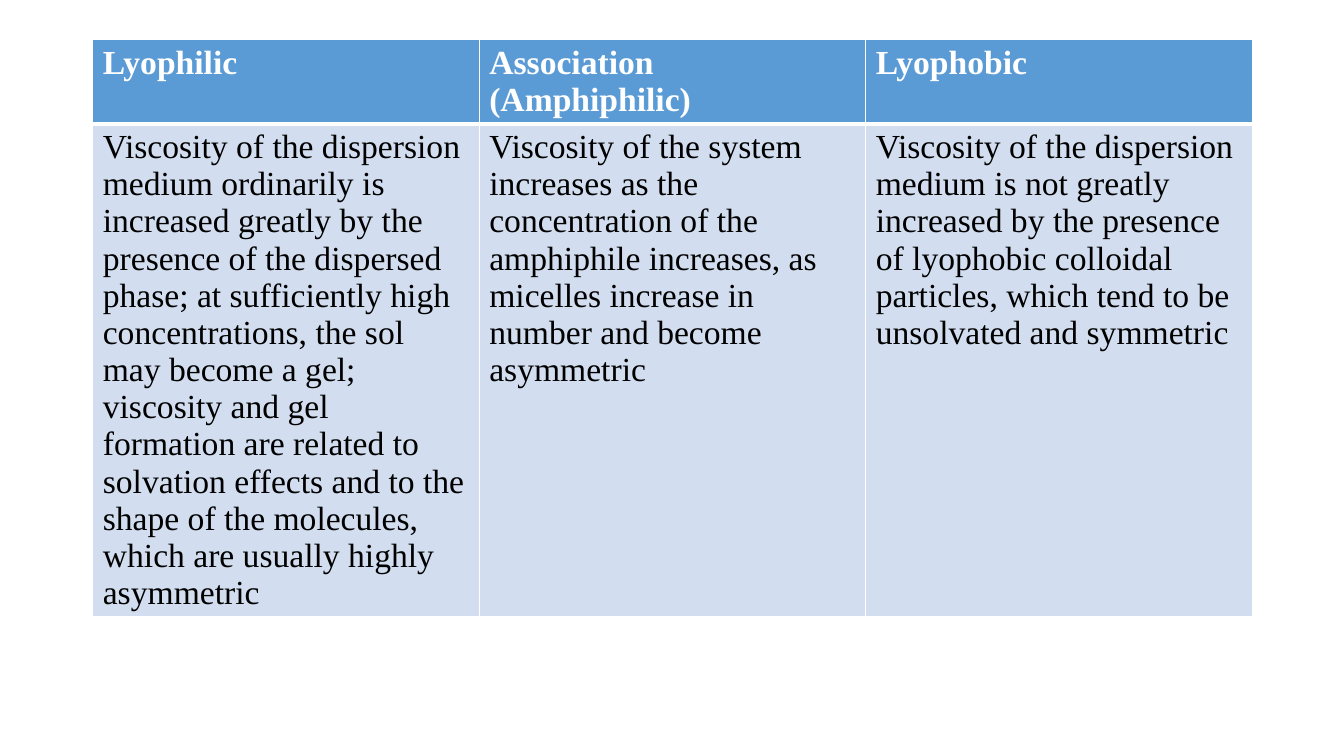
"""Build a slide with a table comparing the viscosity of three colloid types."""
from lxml import etree
from pptx import Presentation
from pptx.dml.color import RGBColor
from pptx.oxml.ns import qn
from pptx.util import Inches, Pt

COLUMNS = [
    ("Lyophilic",
     "Viscosity of the dispersion medium ordinarily is increased greatly by the "
     "presence of the dispersed phase; at sufficiently high concentrations, the sol "
     "may become a gel; viscosity and gel formation are related to solvation effects "
     "and to the shape of the molecules, which are usually highly asymmetric"),
    ("Association (Amphiphilic)",
     "Viscosity of the system increases as the concentration of the amphiphile "
     "increases, as micelles increase in number and become asymmetric"),
    ("Lyophobic",
     "Viscosity of the dispersion medium is not greatly increased by the presence of "
     "lyophobic colloidal particles, which tend to be unsolvated and symmetric"),
]
ROW_STYLES = [
    {"height": 0.83, "fill": "5B9BD5", "text": "FFFFFF", "bold": True,
     "borders": {"lnL": 1, "lnR": 1, "lnT": 1, "lnB": 3}},
    {"height": 4.89, "fill": "D2DEEF", "text": "000000", "bold": False,
     "borders": {"lnL": 1, "lnR": 1, "lnT": 3, "lnB": 1}},
]
BORDER_COLOR = "FFFFFF"
FONT = "Times New Roman"
LEFT, TOP, WIDTH = 0.92, 0.39, 11.5


def color(value):
    return RGBColor.from_string(value)


def set_borders(cell, widths):
    properties = cell._tc.get_or_add_tcPr()
    for position, (side, width) in enumerate(widths.items()):
        line = etree.Element(qn(f"a:{side}"), w=str(Pt(width)))
        fill = etree.SubElement(line, qn("a:solidFill"))
        etree.SubElement(fill, qn("a:srgbClr"), val=BORDER_COLOR)
        properties.insert(position, line)


def format_cell(cell, text, style):
    cell.text_frame.text = text
    font = cell.text_frame.paragraphs[0].runs[0].font
    font.name = FONT
    font.size = Pt(24)
    font.bold = style["bold"]
    font.color.rgb = color(style["text"])
    cell.fill.solid()
    cell.fill.fore_color.rgb = color(style["fill"])
    set_borders(cell, style["borders"])


def main():
    presentation = Presentation()
    presentation.slide_width = Inches(13.33)
    presentation.slide_height = Inches(7.5)
    slide = presentation.slides.add_slide(presentation.slide_layouts[6])

    height = sum(style["height"] for style in ROW_STYLES)
    table = slide.shapes.add_table(
        len(ROW_STYLES), len(COLUMNS),
        Inches(LEFT), Inches(TOP), Inches(WIDTH), Inches(height)).table
    for row, style in zip(table.rows, ROW_STYLES):
        row.height = Inches(style["height"])
    for column_index, texts in enumerate(COLUMNS):
        table.columns[column_index].width = Inches(WIDTH / len(COLUMNS))
        for row_index, (text, style) in enumerate(zip(texts, ROW_STYLES)):
            format_cell(table.cell(row_index, column_index), text, style)

    presentation.save("out.pptx")


if __name__ == "__main__":
    main()
